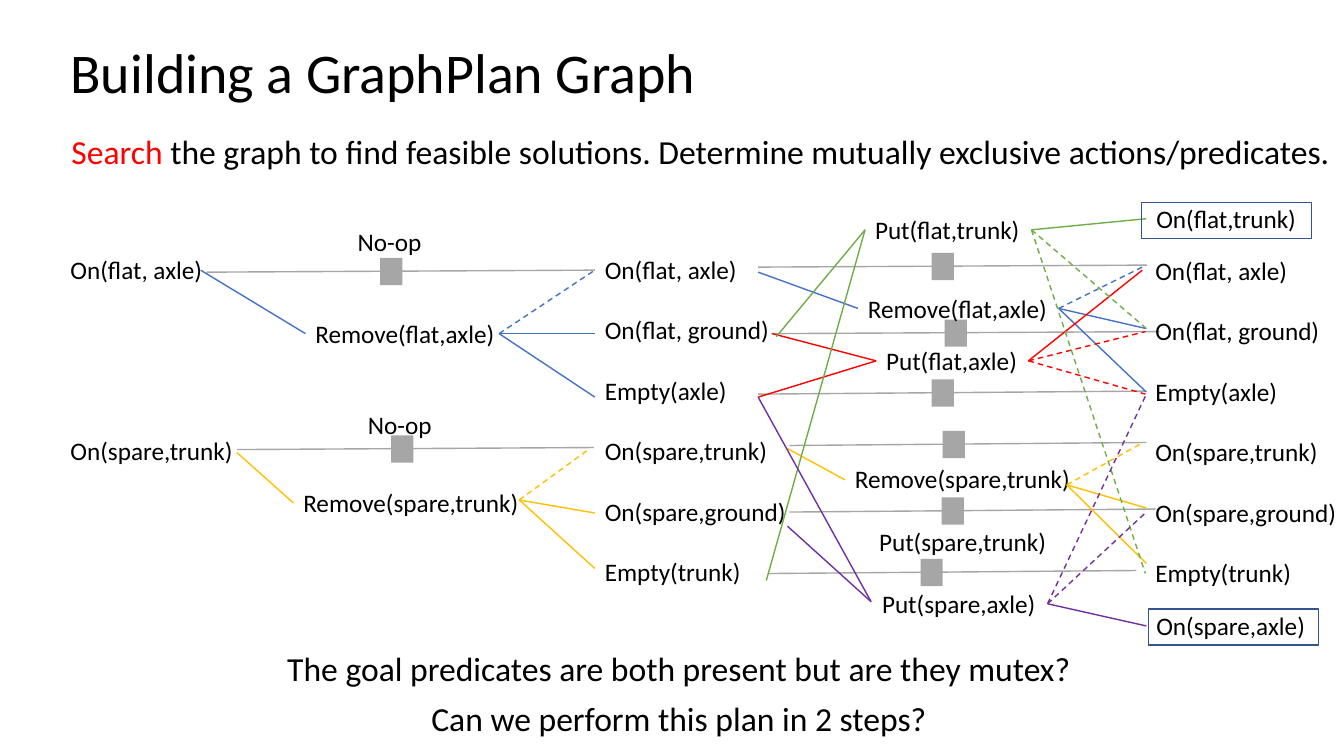
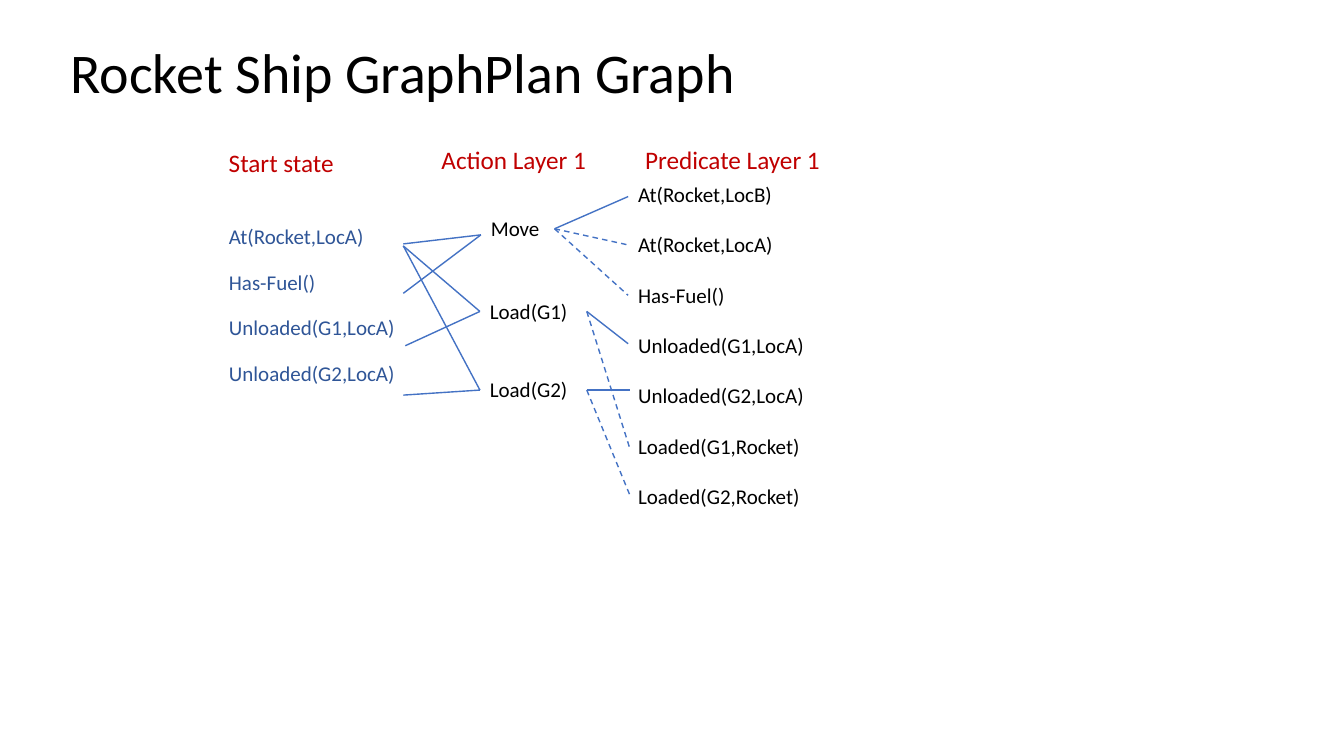
from dataclasses import dataclass

from lxml.etree import SubElement
from pptx import Presentation
from pptx.dml.color import RGBColor
from pptx.enum.dml import MSO_LINE_DASH_STYLE as Dash
from pptx.enum.shapes import MSO_CONNECTOR as Link, MSO_SHAPE as Form
from pptx.enum.text import MSO_ANCHOR as Anchor, PP_ALIGN as Align
from pptx.oxml.ns import qn
from pptx.util import Inches, Pt

# Shared look
FONT = "Calibri"
BLACK, RED, CRIMSON, NAVY = "000000", "FF0000", "C00000", "2F5597"
BLUE, GOLD, GREEN, PURPLE = "4472C4", "FFC000", "70AD47", "7030A0"
GRAY, FRAME = "A6A6A6", "325491"

Point = tuple[float, float]
Box = tuple[float, float, float, float]
Run = tuple[str, str]


@dataclass
class Label:
    """One line of text."""
    text: str
    left: float
    top: float
    width: float
    size: float = 18
    color: str = BLACK


@dataclass
class Column:
    """Lines of text with an equal gap in points."""
    items: list[str]
    box: Box
    gap: float
    size: float = 18


@dataclass
class Fan:
    """Edges that meet at one hub."""
    hub: Point
    color: str
    solid: list[Point]
    dashed: list[Point]


@dataclass
class Noop:
    """A state carried on: a gray line with a box on it."""
    start: Point
    end: Point
    left: float


def paint(target, color: str) -> None:
    """Give a font, fill or line its colour."""
    if hasattr(target, "solid"):
        target.solid()
        target.fore_color.rgb = RGBColor.from_string(color)
    else:
        target.color.rgb = RGBColor.from_string(color)


def write(para, runs: list[Run], size: float) -> None:
    para.alignment = Align.LEFT
    para.space_before = para.space_after = Pt(0)
    for text, color in runs:
        run = para.add_run()
        run.text = text
        run.font.name, run.font.size = FONT, Pt(size)
        paint(run.font, color)


def stack(frame, items: list[str], size: float, gap: float, color: str) -> list:
    """Write a list, one paragraph an item, and return the paragraphs."""
    frame.word_wrap = True
    paras = []
    for i, item in enumerate(items):
        para = frame.add_paragraph() if i else frame.paragraphs[0]
        write(para, [(item, color)], size)
        if i:
            para.space_before = Pt(gap)
        paras.append(para)
    return paras


def place(shape, box: Box) -> None:
    shape.left, shape.top, shape.width, shape.height = map(Inches, box)


def head(deck, layout: int, text: str):
    """Add a slide with the shared title style."""
    slide = deck.slides.add_slide(deck.slide_layouts[layout])
    title = slide.shapes.title
    place(title, (0.6, 0.4, 11.5, 0.69))
    title.text_frame.vertical_anchor = Anchor.MIDDLE
    para = title.text_frame.paragraphs[0]
    write(para, [(text, BLACK)], 40)
    para.line_spacing = 0.9
    return slide


def line_of(slide, runs: list[Run], box: Box, size: float) -> None:
    frame = slide.shapes.add_textbox(*map(Inches, box)).text_frame
    frame.word_wrap = True
    write(frame.paragraphs[0], runs, size)


def label(slide, item: Label) -> None:
    high = round(item.size / 60 + 0.1, 2)
    line_of(slide, [(item.text, item.color)],
            (item.left, item.top, item.width, high), item.size)


def column(slide, col: Column) -> None:
    frame = slide.shapes.add_textbox(*map(Inches, col.box)).text_frame
    stack(frame, col.items, col.size, col.gap, BLACK)


def edge(slide, start: Point, end: Point, color: str, dashed: bool = False) -> None:
    wire = slide.shapes.add_connector(Link.STRAIGHT, *map(Inches, (*start, *end)))
    paint(wire.line, color) if hasattr(wire.line, "solid") else paint(wire.line.fill, color)
    wire.line.width = Pt(1)
    if dashed:
        wire.line.dash_style = Dash.DASH
    SubElement(wire._element.spPr, qn("a:effectLst"))


def fan(slide, item: Fan) -> None:
    for end in item.solid:
        edge(slide, item.hub, end, item.color)
    for end in item.dashed:
        edge(slide, item.hub, end, item.color, True)


def block(slide, box: Box, fill: str = "", line: str = "") -> None:
    rect = slide.shapes.add_shape(Form.RECTANGLE, *map(Inches, box))
    rect.shadow.inherit = False
    if fill:
        paint(rect.fill, fill)
    else:
        rect.fill.background()
    if line:
        paint(rect.line.fill, line)
        rect.line.width = Pt(1)
    else:
        rect.line.fill.background()


def noop(slide, item: Noop) -> None:
    edge(slide, item.start, item.end, GRAY)
    mid = (item.start[1] + item.end[1]) / 2
    block(slide, (item.left, mid - 0.13, 0.22, 0.27), fill=GRAY)


# Spare tire graph
STATES = ["On(flat, axle)", "On(flat, ground)", "Empty(axle)",
          "On(spare,trunk)", "On(spare,ground)", "Empty(trunk)"]
TIRE_COLS = [
    Column([STATES[0], STATES[3]], (0.6, 2.47, 1.92, 2.22), 107.8),
    Column(STATES, (5.9, 2.47, 2.11, 3.43), 21.6),
    Column(STATES, (11.36, 2.48, 2.11, 3.43), 21.6),
]
TIRE_TEXT = [
    Label("No-op", 3.45, 2.2, 0.84),
    Label("No-op", 3.55, 4.01, 0.84),
    Label("Remove(flat,axle)", 3.03, 3.11, 2),
    Label("Remove(spare,trunk)", 2.91, 4.79, 2.36),
    Label("Put(flat,trunk)", 8.58, 2.08, 1.65),
    Label("Remove(flat,axle)", 8.51, 2.86, 2),
    Label("Put(flat,axle)", 8.69, 3.38, 1.52),
    Label("Remove(spare,trunk)", 8.38, 4.55, 2.36),
    Label("Put(spare,trunk)", 8.62, 5.17, 1.88),
    Label("Put(spare,axle)", 8.65, 5.79, 1.74),
    Label("On(flat,trunk)", 11.37, 1.97, 1.6),
    Label("On(spare,axle)", 11.37, 6.01, 1.69),
    Label("The goal predicates are both present but are they mutex?",
          2.75, 6.38, 8.05, 24),
    Label("Can we perform this plan in 2 steps?", 4.18, 6.87, 5.16, 24),
]
NOOPS = [
    Noop((2.05, 2.7), (5.9, 2.68), 3.77),
    Noop((2.35, 4.46), (5.89, 4.44), 3.88),
    Noop((7.52, 2.65), (11.37, 2.63), 9.24),
    Noop((7.65, 3.31), (11.5, 3.29), 9.37),
    Noop((7.52, 3.91), (11.37, 3.88), 9.24),
    Noop((7.83, 4.42), (11.37, 4.39), 9.35),
    Noop((7.83, 5.08), (11.47, 5.05), 9.34),
    Noop((7.62, 5.69), (11.27, 5.66), 9.13),
]
TIRE_FANS = [
    # First step
    Fan((3.03, 3.31), BLUE, [(1.99, 2.68)], []),
    Fan((4.95, 3.31), BLUE, [(5.9, 3.94), (5.9, 3.31)], [(5.9, 2.68)]),
    Fan((2.91, 4.99), GOLD, [(2.35, 4.49)], []),
    Fan((5.15, 4.96), GOLD, [(5.9, 5.64), (5.9, 5.09)], [(5.85, 4.45)]),
    # Second step, remove
    Fan((8.51, 3.06), BLUE, [(7.52, 2.7)], []),
    Fan((10.5, 3.06), BLUE, [(11.37, 3.89), (11.37, 3.26)], [(11.37, 2.63)]),
    Fan((8.38, 4.76), GOLD, [(7.81, 4.45)], []),
    Fan((10.58, 4.81), GOLD, [(11.37, 5.59), (11.37, 5.04)], [(11.32, 4.4)]),
    # Second step, put
    Fan((8.69, 3.58), RED, [(7.66, 3.31), (7.52, 3.94)], []),
    Fan((10.2, 3.58), RED, [(11.33, 2.68)], [(11.36, 3.91), (11.36, 3.29)]),
    Fan((8.58, 2.28), GREEN, [(7.7, 3.34), (7.6, 5.76)], []),
    Fan((10.23, 2.28), GREEN, [(11.37, 2.17)], [(11.37, 3.26), (11.36, 5.69)]),
    Fan((8.64, 5.97), PURPLE, [(7.52, 3.94), (7.81, 5.22)], []),
    Fan((10.39, 5.99), PURPLE, [(11.37, 6.21)], [(11.37, 5.08), (11.37, 3.91)]),
]
GOALS = [(11.32, 2.01), (11.39, 6.04)]

# Rocket graph
START = ["At(Rocket,LocA)", "Has-Fuel()", "Unloaded(G1,LocA)", "Unloaded(G2,LocA)"]
NEXT = Column(["At(Rocket,LocB)", *START, "Loaded(G1,Rocket)", "Loaded(G2,Rocket)"],
              (6.23, 1.75, 2.35, 5.13), 18, 15)
SHIP_TEXT = [
    Label("Start state", 2.17, 1.41, 1.25, color=CRIMSON),
    Label("Action Layer 1", 4.28, 1.38, 1.65, color=CRIMSON),
    Label("Predicate Layer 1", 6.3, 1.38, 1.96, color=CRIMSON),
    Label("Move", 4.77, 2.09, 0.73, 15),
    Label("Load(G1)", 4.76, 2.91, 1.06, 15),
    Label("Load(G2)", 4.76, 3.69, 1.06, 15),
]
SHIP_FANS = [
    Fan((4.77, 2.33), BLUE, [(4, 2.42), (4, 2.91)], []),
    Fan((4.76, 3.09), BLUE, [(4, 2.44), (4.02, 3.43)], []),
    Fan((4.76, 3.87), BLUE, [(4, 2.44), (4, 3.92)], []),
    Fan((5.5, 2.27), BLUE, [(6.23, 1.95)], [(6.23, 2.43), (6.23, 2.93)]),
    Fan((5.82, 3.09), BLUE, [(6.23, 3.41)], [(6.25, 4.46)]),
    Fan((5.82, 3.87), BLUE, [(6.25, 3.87)], [(6.25, 4.92)]),
]


def graph(slide, cols: list[Column], texts: list[Label], fans: list[Fan]) -> None:
    for col in cols:
        column(slide, col)
    for text in texts:
        label(slide, text)
    for item in fans:
        fan(slide, item)


def tire(deck) -> None:
    slide = head(deck, 5, "Building a GraphPlan Graph")
    line_of(slide, [("Search", RED),
                    (" the graph to find feasible solutions. Determine mutually "
                     "exclusive actions/predicates.", BLACK)],
            (0.61, 1.25, 12.86, 0.5), 24)
    for item in NOOPS:
        noop(slide, item)
    graph(slide, TIRE_COLS, TIRE_TEXT, TIRE_FANS)
    for left, top in GOALS:
        block(slide, (left, top, 1.69, 0.36), line=FRAME)


def ship(deck) -> None:
    slide = head(deck, 1, "Rocket Ship GraphPlan Graph")
    # Start states, as a list without bullets
    body = slide.placeholders[1]
    place(body, (2.17, 2.2, 2.35, 4.68))
    for para in stack(body.text_frame, START, 15, 16.2, NAVY):
        para.line_spacing = 0.9
        props = para._p.get_or_add_pPr()
        props.set("marL", "0")
        props.set("indent", "0")
        SubElement(props, qn("a:buNone"))
    graph(slide, [NEXT], SHIP_TEXT, SHIP_FANS)


def main() -> None:
    deck = Presentation()
    deck.slide_width, deck.slide_height = Inches(13.33), Inches(7.5)
    tire(deck)
    ship(deck)
    deck.save("out.pptx")


if __name__ == "__main__":
    main()
